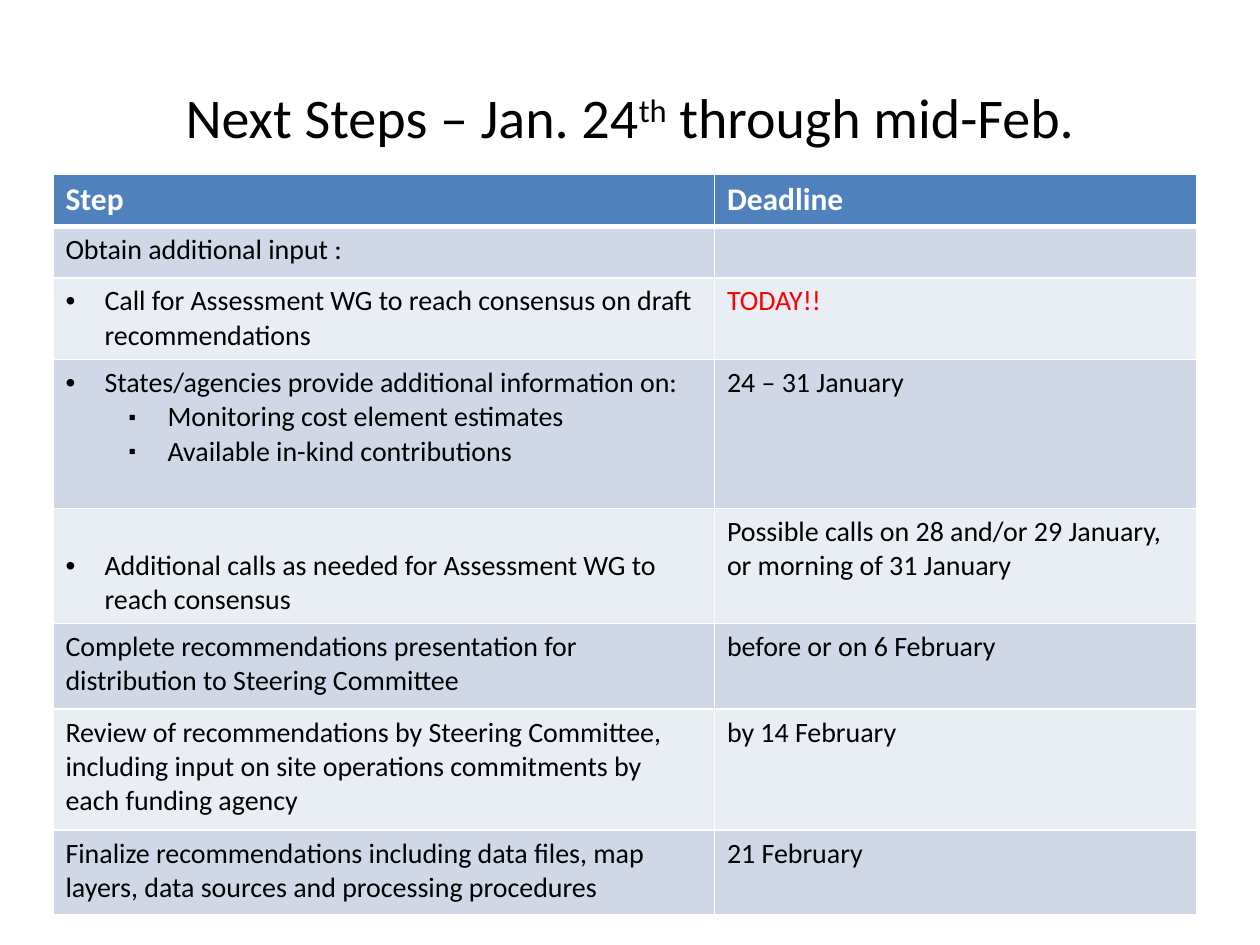
from lxml import etree
from pptx import Presentation
from pptx.dml.color import RGBColor
from pptx.enum.text import MSO_ANCHOR, PP_ALIGN
from pptx.oxml.ns import qn
from pptx.util import Inches, Pt

MIDDLE = MSO_ANCHOR.MIDDLE
CENTER = PP_ALIGN.CENTER

BLACK = RGBColor(0x00, 0x00, 0x00)
WHITE = RGBColor(0xFF, 0xFF, 0xFF)
RED = RGBColor(0xFF, 0x00, 0x00)
HEADER_BLUE = RGBColor(0x4F, 0x81, 0xBD)
BANDS = (RGBColor(0xD0, 0xD8, 0xE8), RGBColor(0xE9, 0xED, 0xF4))
FONT = "Calibri"

# Each line of a cell is (bullet level, text); level 0 has no bullet
STEPS = [
    ([(0, "Step")], "Deadline", 0.42),
    ([(0, "Obtain additional input :")], "", 0.39),
    ([(1, "Call for Assessment WG to reach consensus on draft recommendations")],
     "TODAY!!", 0.65),
    ([(1, "States/agencies provide additional information on:"),
      (2, "Monitoring cost element estimates"),
      (2, "Available in-kind contributions")], "24 – 31 January", 1.18),
    ([(1, "Additional calls as needed for Assessment WG to reach consensus")],
     "Possible calls on 28 and/or 29 January, or morning of 31 January", 0.91),
    ([(0, "Complete recommendations presentation for distribution to Steering Committee")],
     "before or on 6 February", 0.68),
    ([(0, "Review of recommendations by Steering Committee, including input on site "
          "operations commitments by each funding agency")], "by 14 February", 0.96),
    ([(0, "Finalize recommendations including data files, map layers, data sources "
          "and processing procedures")], "21 February", 0.67),
]
COLUMN_WIDTHS = (5.25, 3.83)
LOWERED_ROW = 4  # its step starts one line below its deadline

# Bullet level: (left indent, character, size in percent)
BULLETS = {1: (0.31, "•", 100), 2: (0.81, "▪", 75)}
HANGING = 0.31


def style_font(font, size, color, bold=False):
    font.name = FONT
    font.size = Pt(size)
    font.bold = bold
    font.color.rgb = color


def add_bullet(para, level):
    indent, character, percent = BULLETS[level]
    para.level = level - 1
    properties = para._p.get_or_add_pPr()
    properties.set("marL", str(Inches(indent)))
    properties.set("indent", str(-Inches(HANGING)))
    for tag, name, value in (("a:buSzPct", "val", str(percent * 1000)),
                             ("a:buFont", "typeface", "Arial"),
                             ("a:buChar", "char", character)):
        etree.SubElement(properties, qn(tag)).set(name, value)


def set_borders(cell, top, bottom):
    properties = cell._tc.get_or_add_tcPr()
    for tag, width in (("a:lnL", 1), ("a:lnR", 1), ("a:lnT", top), ("a:lnB", bottom)):
        line = etree.SubElement(properties, qn(tag), w=str(Pt(width)))
        fill = etree.SubElement(line, qn("a:solidFill"))
        etree.SubElement(fill, qn("a:srgbClr"), val=str(WHITE))


def fill_cell(cell, lines, row, color):
    # Borders come before the fill in the cell properties
    set_borders(cell, 3 if row == 1 else 1, 3 if row == 0 else 1)
    cell.fill.solid()
    cell.fill.fore_color.rgb = HEADER_BLUE if row == 0 else BANDS[(row - 1) % 2]
    cell.text_frame.text = "\n".join(text for _, text in lines)
    for para, (level, _) in zip(cell.text_frame.paragraphs, lines):
        if level:
            add_bullet(para, level)
        for span in para.runs:
            style_font(span.font, 18 if row == 0 else 16, color, row == 0)


def add_title(page):
    title = page.shapes.title
    title.left, title.top = Inches(0.5), Inches(0.3)
    title.width, title.height = Inches(9), Inches(1.25)
    title.text_frame.vertical_anchor = MIDDLE
    para = title.text_frame.paragraphs[0]
    para.alignment = CENTER
    for text, raised in (("Next Steps – Jan. 24", False), ("th", True),
                         (" through mid-Feb.", False)):
        span = para.add_run()
        span.text = text
        style_font(span.font, 32, BLACK)
        if raised:
            span._r.get_or_add_rPr().set("baseline", "30000")


def add_steps_table(page):
    height = sum(row_height for _, _, row_height in STEPS)
    table = page.shapes.add_table(
        len(STEPS), len(COLUMN_WIDTHS), Inches(0.42), Inches(1.38),
        Inches(sum(COLUMN_WIDTHS)), Inches(height)).table
    for column, width in zip(table.columns, COLUMN_WIDTHS):
        column.width = Inches(width)
    for row, (step, deadline, row_height) in enumerate(STEPS):
        table.rows[row].height = Inches(row_height)
        color = WHITE if row == 0 else BLACK
        fill_cell(table.cell(row, 0), step, row, color)
        fill_cell(table.cell(row, 1), [(0, deadline)], row,
                  RED if deadline == "TODAY!!" else color)
    table.cell(LOWERED_ROW, 0).margin_top = Inches(0.32)


def main():
    deck = Presentation()
    deck.slide_width, deck.slide_height = Inches(10), Inches(7.5)
    page = deck.slides.add_slide(deck.slide_layouts[5])
    add_title(page)
    add_steps_table(page)
    deck.save("out.pptx")


if __name__ == "__main__":
    main()
